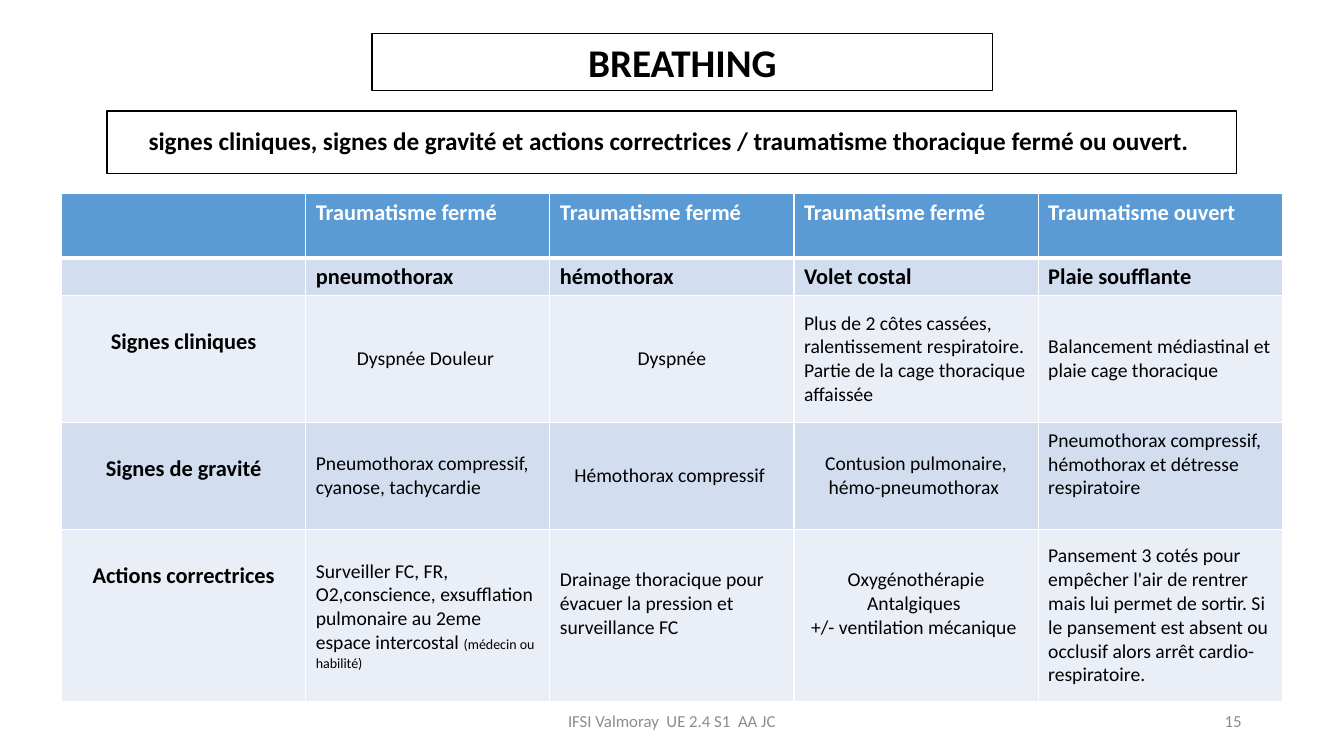
from lxml import etree
from pptx import Presentation
from pptx import util as u
from pptx.dml.color import RGBColor
from pptx.enum import shapes, text
from pptx.oxml.ns import qn

Pt = u.Pt
HUES = {"ink": "000000", "white": "FFFFFF", "head": "5B9BD5",
        "dark": "D2DEEF", "pale": "EAEFF7", "grey": "8C8C8C"}
SIDE = {"l": text.PP_ALIGN.LEFT, "c": text.PP_ALIGN.CENTER, "r": text.PP_ALIGN.RIGHT}
TOP, MID = text.MSO_ANCHOR.TOP, text.MSO_ANCHOR.MIDDLE

TITLE = "signes cliniques, signes de gravité et actions correctrices / traumatisme thoracique fermé ou ouvert. "
BANNER = "BREATHING"
FOOT = [("IFSI Valmoray  UE 2.4 S1  AA JC", (318, 500.4, 324, 28.75), "c"),
        ("15", (678, 500.4, 216, 28.75), "r")]
HEADS = [["", "Traumatisme fermé", "Traumatisme fermé", "Traumatisme fermé", "Traumatisme ouvert"],
         ["", "pneumothorax", "hémothorax", "Volet costal", "Plaie soufflante"]]
NOTE = "(médecin ou habilité)"
BODY = [
    ("Signes cliniques", [
        ("c", "Dyspnée Douleur "),
        ("c", "Dyspnée"),
        ("l", "Plus de 2 côtes cassées, ralentissement respiratoire. Partie de la cage thoracique affaissée"),
        ("l", "Balancement médiastinal et plaie cage thoracique")]),
    ("Signes de gravité", [
        ("l", "Pneumothorax compressif, cyanose, tachycardie"),
        ("c", "Hémothorax compressif "),
        ("c", "Contusion pulmonaire, hémo-pneumothorax "),
        ("l", "Pneumothorax compressif, hémothorax et détresse respiratoire")]),
    ("Actions correctrices", [
        ("l", "Surveiller FC, FR, O2,conscience, exsufflation pulmonaire au 2eme espace intercostal "),
        ("l", "Drainage thoracique pour évacuer la pression et surveillance FC"),
        ("c", "Oxygénothérapie\nAntalgiques \n+/- ventilation mécanique "),
        ("l", "Pansement 3 cotés pour empêcher l'air de rentrer mais lui permet de sortir. "
              "Si le pansement est absent ou occlusif alors arrêt cardio-respiratoire.")]),
]
RAISED = {(3, 4), (4, 2), (4, 3)}
GRID = (44, 138.4, 872, 361.4)
HIGH = [46, 26, 90.7, 76.4, 122.9]
LIFT, DROP = 20.4, 23


def rgb(hue):
    return RGBColor.from_string(HUES[hue])


def style(run, size, hue="ink", bold=False):
    for key, val in {"name": "Calibri", "size": Pt(size), "bold": bold}.items():
        setattr(run.font, key, val)
    run.font.color.rgb = rgb(hue)


def write(frame, words, size, hue="ink", bold=False, side="l"):
    frame.word_wrap = True
    for i, line in enumerate(words.split("\n")):
        par = frame.paragraphs[0] if i == 0 else frame.add_paragraph()
        par.alignment = SIDE[side]
        if line:
            run = par.add_run()
            run.text = line
            style(run, size, hue, bold)
        else:
            par._p.get_or_add_endParaRPr().set("sz", str(size * 100))


def place(shape, box):
    for key, val in zip(("left", "top", "width", "height"), box):
        setattr(shape, key, Pt(val))


def frame_box(shape):
    shape.fill.solid()
    shape.fill.fore_color.rgb = rgb("white")
    shape.line.color.rgb = rgb("ink")
    shape.line.width = Pt(1)


def edges(cell, row):
    prop = cell._tc.get_or_add_tcPr()
    thick = {"T": 3 if row == 1 else 1, "B": 3 if row == 0 else 1}
    for i, name in enumerate("LRTB"):
        line = etree.Element(qn("a:ln" + name), w=str(Pt(thick.get(name, 1))))
        fill = etree.SubElement(line, qn("a:solidFill"))
        etree.SubElement(fill, qn("a:srgbClr"), val=HUES["white"])
        prop.insert(i, line)


def fill_table(table):
    for col in table.columns:
        col.width = Pt(GRID[2] / len(table.columns))
    for row, high in zip(table.rows, HIGH):
        row.height = Pt(high)
    for r, row in enumerate(table.rows):
        for c, cell in enumerate(row.cells):
            cell.fill.solid()
            cell.fill.fore_color.rgb = rgb("head" if r == 0 else "dark" if r % 2 else "pale")
            edges(cell, r)
            frame = cell.text_frame
            if r < 2:
                write(frame, HEADS[r][c], 16, "ink" if r else "white", True)
                continue
            label, facts = BODY[r - 2]
            if c == 0:
                cell.margin_top = Pt(DROP)
                write(frame, label, 16, bold=True, side="c")
                continue
            side, words = facts[c - 1]
            cell.vertical_anchor = MID
            if (r, c) in RAISED:
                cell.margin_bottom = Pt(LIFT)
            write(frame, words, 14, side=side)
    run = table.cell(4, 1).text_frame.paragraphs[0].add_run()
    run.text = NOTE
    style(run, 10)


def main():
    deck = Presentation()
    deck.slide_width, deck.slide_height = Pt(960), Pt(540)
    slide = deck.slides.add_slide(deck.slide_layouts[5])

    title = slide.shapes.title
    place(title, (76.4, 79.2, 807, 44.6))
    frame_box(title)
    title.text_frame.vertical_anchor = MID
    write(title.text_frame, TITLE, 18, bold=True, side="c")
    title.text_frame.paragraphs[0].line_spacing = 0.9

    grid = slide.shapes.add_table(5, 5, *map(Pt, GRID))
    fill_table(grid.table)

    banner = slide.shapes.add_shape(shapes.MSO_SHAPE.RECTANGLE, *map(Pt, (265.7, 23.8, 443.5, 41)))
    banner.shadow.inherit = False
    frame_box(banner)
    banner.text_frame.vertical_anchor = TOP
    write(banner.text_frame, BANNER, 28, bold=True, side="c")

    for words, box, side in FOOT:
        foot = slide.shapes.add_textbox(*map(Pt, box))
        foot.text_frame.vertical_anchor = MID
        write(foot.text_frame, words, 12, "grey", side=side)

    deck.save("out.pptx")


if __name__ == "__main__":
    main()
